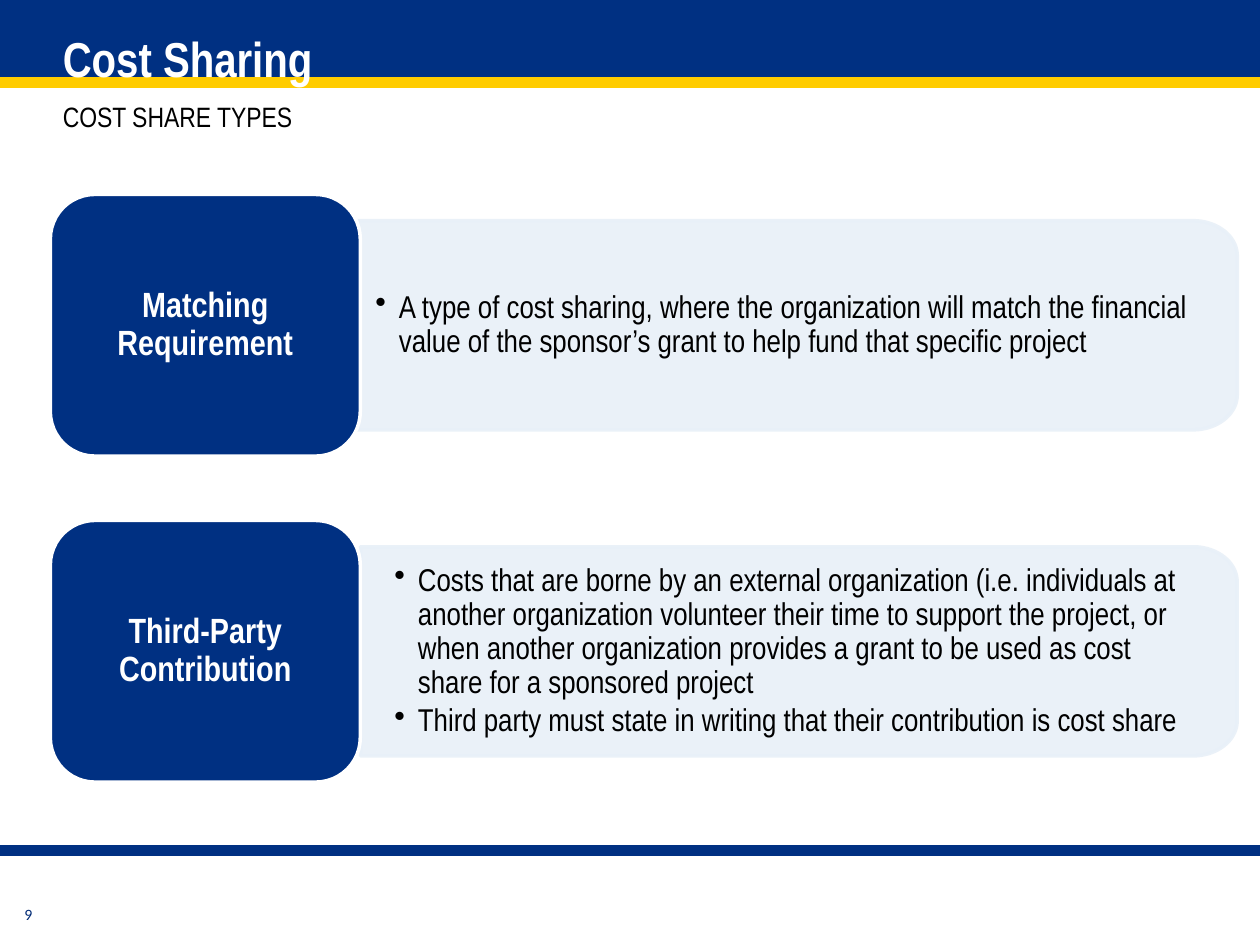
import math
import pptx
import pptx.util
import pptx.oxml
import pptx.oxml.ns
import pptx.dml.color
import pptx.enum.shapes
import pptx.enum.text

Pt = pptx.util.Pt
RGB = pptx.dml.color.RGBColor.from_string
Align = pptx.enum.text.PP_ALIGN
Mid = pptx.enum.text.MSO_ANCHOR.MIDDLE
Auto = pptx.enum.shapes.MSO_SHAPE
NS = pptx.oxml.ns.nsdecls("a")
colors = {"blue": "003082", "gold": "FFCC00", "pale": "E8F0F8",
          "white": "FFFFFF", "black": "000000", "page": "002A75"}


def paint(shape, fill, line, alpha=None):
    shape.shadow.inherit = False
    shape.fill.solid()
    shape.fill.fore_color.rgb = RGB(colors[fill])
    shape.line.color.rgb = RGB(colors[line])
    shape.line.width = Pt(2)
    if alpha:
        for node in shape._element.spPr.iter(pptx.oxml.ns.qn("a:srgbClr")):
            node.append(pptx.oxml.parse_xml(f'<a:alpha {NS} val="{alpha * 1000}"/>'))


def write(shape, lines, size, color, bold=False, align=Align.LEFT,
          inset=(7.2, 3.6, 7.2, 3.6), face="Arial Narrow", bullet=False, gap=None):
    frame = shape.text_frame
    frame.word_wrap = True
    frame.margin_left, frame.margin_top, frame.margin_right, frame.margin_bottom = map(Pt, inset)
    frame.text = "\n".join(lines)
    for para in frame.paragraphs:
        para.alignment = align
        if gap:
            para.line_spacing = 0.9
            para.space_after = Pt(gap)
        if bullet:
            props = para._p.get_or_add_pPr()
            props.set("marL", str(Pt(13.5)))
            props.set("indent", str(Pt(-13.5)))
            props.append(pptx.oxml.parse_xml(f'<a:buChar {NS} char="•"/>'))
        for run in para.runs:
            run.font.name = face
            run.font.size = Pt(size)
            run.font.bold = bold
            run.font.color.rgb = RGB(colors[color])


deck = pptx.Presentation()
deck.slide_width, deck.slide_height = Pt(720), Pt(540)
slide = deck.slides.add_slide(deck.slide_layouts[6])
shapes = slide.shapes

# Header band and rules
band = shapes.add_shape(Auto.RECTANGLE, 0, 0, Pt(720), Pt(48))
paint(band, "blue", "blue")
band.line.fill.background()
for y, color in ((47, "gold"), (486, "blue")):
    rule = shapes.add_connector(pptx.enum.shapes.MSO_CONNECTOR.STRAIGHT, 0, Pt(y), Pt(720), Pt(y))
    rule.line.color.rgb = RGB(colors[color])
    rule.line.width = Pt(6)
    rule._element.spPr.append(pptx.oxml.parse_xml(f"<a:effectLst {NS}/>"))

# Page number, title and subtitle
page = shapes.add_textbox(Pt(7.2), Pt(513.5), Pt(18), Pt(17.3))
write(page, ["9"], 9, "page", align=Align.CENTER, inset=(0, 3.6, 0, 3.6), face="Calibri")
page.text_frame.word_wrap = False
title = shapes.add_textbox(Pt(28.8), Pt(13), Pt(662.4), Pt(40.3))
write(title, ["Cost Sharing"], 28, "white", bold=True)
sub = shapes.add_textbox(Pt(28.8), Pt(53.3), Pt(662.4), Pt(31.7))
write(sub, ["COST SHARE TYPES"], 16, "black")

# Cost share types: pale panel behind a rounded label
types = [
    ("Matching Requirement", 195.1,
     ["A type of cost sharing, where the organization will match the financial value of the "
      "sponsor’s grant to help fund that specific project"]),
    ("Third-Party Contribution", 206,
     ["Costs that are borne by an external organization (i.e. individuals at another organization "
      "volunteer their time to support the project, or when another organization provides a grant "
      "to be used as cost share for a sponsored project",
      "Third party must state in writing that their contribution is cost share"]),
]
right, tall, high = 707, 119.5, 149.5
rx, ry = 25.2, 20
for row, (name, left, notes) in enumerate(types):
    mid = 185.9 + row * 186.3
    top, base = mid - tall / 2, mid + tall / 2

    # Panel outline with elliptical right corners
    turns = [math.radians(a) for a in range(0, 91, 5)]
    upper = [(right - rx + rx * math.sin(t), top + ry - ry * math.cos(t)) for t in turns]
    lower = [(x, 2 * mid - y) for x, y in reversed(upper)]
    edge = upper + lower + [(left, base)]
    build = shapes.build_freeform(Pt(left), Pt(top))
    build.add_line_segments([(Pt(x), Pt(y)) for x, y in edge], close=True)
    panel = build.convert_to_shape()
    paint(panel, "pale", "pale", alpha=90)
    write(panel, notes, 18, "black", inset=(19.4, 15.8, 25.2, 15.8), bullet=True, gap=2.7)
    panel.text_frame.vertical_anchor = Mid

    label = shapes.add_shape(Auto.ROUNDED_RECTANGLE, Pt(28.8), Pt(mid - high / 2), Pt(177.1), Pt(high))
    label.adjustments[0] = 0.17
    paint(label, "blue", "white")
    write(label, [name], 20, "white", bold=True, align=Align.CENTER,
          inset=(13, 10, 13, 10), gap=7)
    label.text_frame.vertical_anchor = Mid

deck.save("out.pptx")
